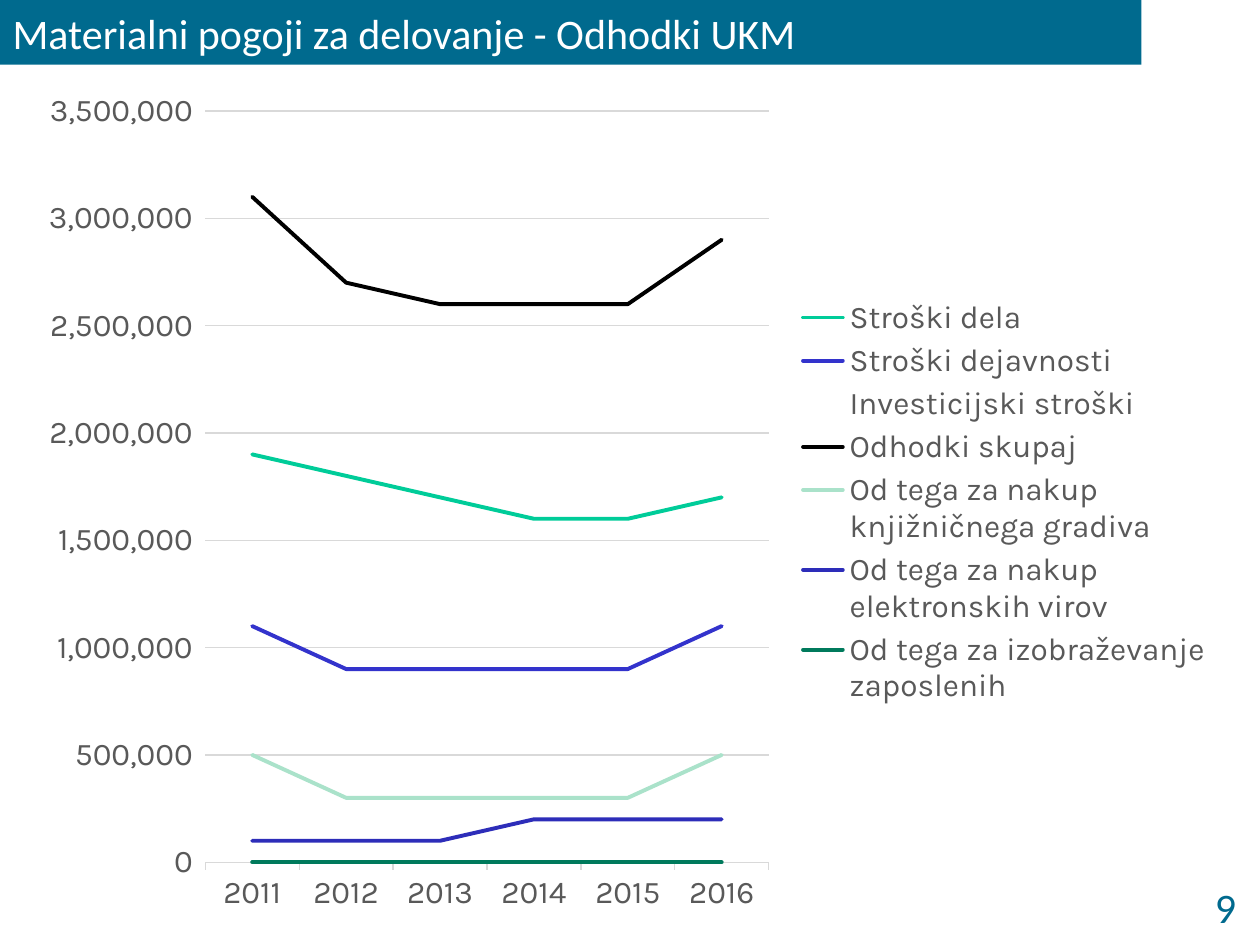
from pptx import Presentation
from pptx.chart.data import CategoryChartData
from pptx.dml.color import RGBColor
from pptx.enum import chart as ch, text
from pptx.util import Pt

COLORS = {
    "teal": "006A8E", "white": "FFFFFF", "label": "595959", "grid": "D9D9D9",
    "mint": "00CC99", "blue": "3333CC", "black": "000000", "pale": "AAE2CA",
    "navy": "2D2DB9", "green": "007A5C",
}
YEARS = ["2011", "2012", "2013", "2014", "2015", "2016"]
# Name, colour, values in hundred thousands
EXPENSES = [
    ("Stroški dela", "mint", (19, 18, 17, 16, 16, 17)),
    ("Stroški dejavnosti", "blue", (11, 9, 9, 9, 9, 11)),
    ("Investicijski stroški", "white", (1, 1, 1, 0, 1, 1)),
    ("Odhodki skupaj", "black", (31, 27, 26, 26, 26, 29)),
    ("Od tega za nakup knjižničnega gradiva", "pale", (5, 3, 3, 3, 3, 5)),
    ("Od tega za nakup elektronskih virov", "navy", (1, 1, 1, 2, 2, 2)),
    ("Od tega za izobraževanje zaposlenih", "green", (0, 0, 0, 0, 0, 0)),
]


def rgb(name):
    return RGBColor.from_string(COLORS[name])


def set_font(font, size, color, name):
    for key, value in {"size": Pt(size), "name": name, "bold": False}.items():
        setattr(font, key, value)
    font.color.rgb = rgb(color)


def set_line(line, color, width):
    line.color.rgb = rgb(color)
    line.width = Pt(width)


def place(sp, box):
    for key, value in zip(("left", "top", "width", "height"), box):
        setattr(sp, key, Pt(value))


def write(sp, words, color, align):
    tf = sp.text_frame
    tf.text = words
    tf.word_wrap = True
    tf.auto_size = text.MSO_AUTO_SIZE.NONE
    tf.vertical_anchor = text.MSO_ANCHOR.MIDDLE
    p = tf.paragraphs[0]
    p.alignment = align
    set_font(p.runs[0].font, 24, color, "Calibri")


def title_bar(s, box, words):
    sp = s.shapes.title
    place(sp, box)
    sp.fill.solid()
    sp.fill.fore_color.rgb = rgb("teal")
    write(sp, words, "white", text.PP_ALIGN.LEFT)


def page_number(s, box, number):
    sp = s.shapes.add_textbox(*map(Pt, box))
    write(sp, number, "teal", text.PP_ALIGN.RIGHT)


def expense_chart(s, box):
    data = CategoryChartData(number_format="#,##0")
    data.categories = YEARS
    for name, _, values in EXPENSES:
        data.add_series(name, [v * 100000 for v in values])
    chart = s.shapes.add_chart(ch.XL_CHART_TYPE.LINE, *map(Pt, box), data).chart
    set_font(chart.font, 10, "black", "Karla")
    chart.has_title = False
    chart.has_legend = True
    chart.legend.position = ch.XL_LEGEND_POSITION.RIGHT
    chart.legend.include_in_layout = False

    plot = chart.plots[0]
    plot.vary_by_categories = False
    for series, (_, color, _) in zip(plot.series, EXPENSES):
        series.smooth = False
        series.marker.style = ch.XL_MARKER_STYLE.NONE
        line = series.format.line
        set_line(line, color, 2.25)
        line._ln.set("cap", "rnd")

    years, amounts = chart.category_axis, chart.value_axis
    for part in (years.tick_labels, amounts.tick_labels, chart.legend):
        set_font(part.font, 18, "label", "Karla")
    set_line(years.format.line, "grid", 0.75)
    amounts.format.line.fill.background()
    amounts.minimum_scale, amounts.maximum_scale = 0, 3500000
    amounts.major_unit = 500000
    amounts.tick_labels.number_format = "#,##0"
    amounts.tick_labels.number_format_is_linked = False
    amounts.has_major_gridlines = True
    set_line(amounts.major_gridlines.format.line, "grid", 0.75)


def main():
    prs = Presentation()
    prs.slide_width, prs.slide_height = Pt(720), Pt(540)
    s = prs.slides.add_slide(prs.slide_layouts[5])
    page_number(s, (643, 502.5, 70.5, 31), "9")
    title_bar(s, (0, 0, 652.3, 36.9), "Materialni pogoji za delovanje - Odhodki UKM")
    expense_chart(s, (14.2, 43.2, 686.2, 487.4))
    prs.save("out.pptx")


if __name__ == "__main__":
    main()
